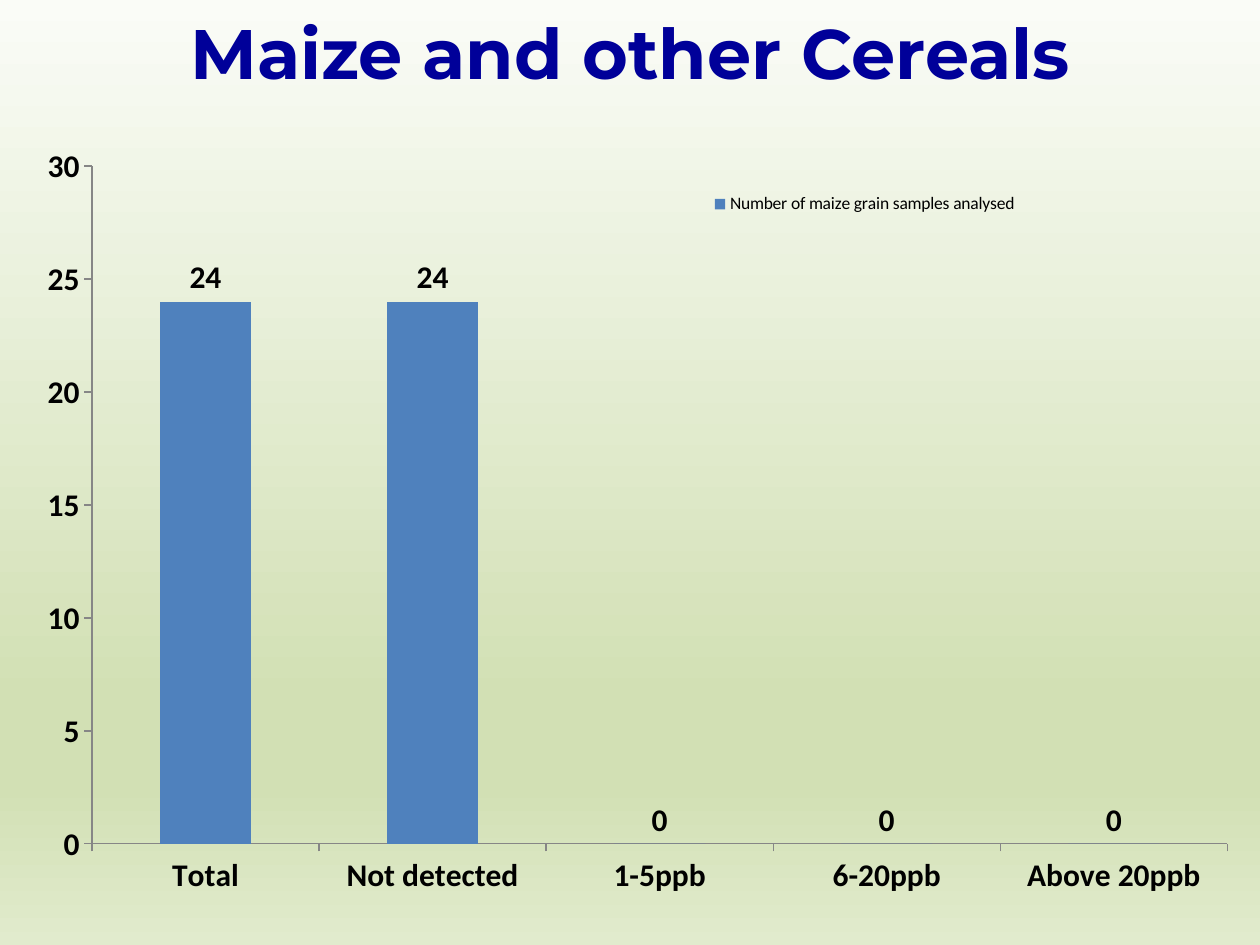
from dataclasses import dataclass

from lxml import etree
from pptx import Presentation
from pptx.chart.data import CategoryChartData
from pptx.dml.color import RGBColor
from pptx.enum.chart import (XL_CHART_TYPE, XL_LABEL_POSITION,
                             XL_LEGEND_POSITION, XL_TICK_MARK)
from pptx.enum.text import MSO_ANCHOR, PP_ALIGN
from pptx.oxml.ns import qn
from pptx.util import Emu, Pt

COLUMNS = XL_CHART_TYPE.COLUMN_CLUSTERED
ABOVE_BAR = XL_LABEL_POSITION.OUTSIDE_END
LEGEND_RIGHT = XL_LEGEND_POSITION.RIGHT
TICK_OUTSIDE = XL_TICK_MARK.OUTSIDE
MIDDLE = MSO_ANCHOR.MIDDLE
CENTER = PP_ALIGN.CENTER

PX_PER_INCH = 126
COLORS = {"title": "000099", "text": "000000", "bar": "4F81BD", "axis": "868686"}
TITLE_FONT, CHART_FONT = "Montserrat", "Calibri"


@dataclass(frozen=True)
class Box:
    """A rectangle in px."""
    left: int
    top: int
    width: int
    height: int

    def to_emu(self) -> list[Emu]:
        return [px(n) for n in (self.left, self.top, self.width, self.height)]


@dataclass(frozen=True)
class GradientStop:
    percent: int
    color: str


SLIDE = Box(0, 0, 1260, 945)
TITLE = Box(63, 10, 1134, 94)
CHART = Box(21, 147, 1207, 756)
PLOT = Box(92, 166, 1136, 678)
LEGEND = Box(708, 188, 314, 32)
BACKGROUND = [GradientStop(0, "FAFCF7"), GradientStop(74, "D2E0B4"),
              GradientStop(83, "D2E0B4"), GradientStop(100, "E1EBCD")]
SAMPLES = {"Total": 24, "Not detected": 24, "1-5ppb": 0, "6-20ppb": 0,
           "Above 20ppb": 0}


def px(length: int) -> Emu:
    return Emu(round(length * 914400 / PX_PER_INCH))


def rgb(name: str) -> RGBColor:
    return RGBColor.from_string(COLORS[name])


def style_font(font, *, size: int, color: str = "text", name: str = CHART_FONT,
               bold: bool = False) -> None:
    font.name, font.size, font.bold = name, Pt(size), bold
    font.color.rgb = rgb(color)


def add_text(slide, box: Box, text: str, *, line_spacing: float = 1.0,
             **font_format) -> None:
    shape = slide.shapes.add_textbox(*box.to_emu())
    frame = shape.text_frame
    frame.word_wrap = True
    frame.vertical_anchor = MIDDLE
    paragraph = frame.paragraphs[0]
    paragraph.alignment = CENTER
    paragraph.line_spacing = line_spacing
    run = paragraph.add_run()
    run.text = text
    style_font(run.font, **font_format)


def paint_background(slide, stops: list[GradientStop]) -> None:
    fill = slide.background.fill
    fill.gradient()
    fill.gradient_angle = 270  # top to bottom
    stop_list = next(slide.element.iter(qn("a:gsLst")))
    for old_stop in list(stop_list):
        stop_list.remove(old_stop)
    for stop in stops:
        node = etree.SubElement(stop_list, qn("a:gs"), pos=str(stop.percent * 1000))
        etree.SubElement(node, qn("a:srgbClr"), val=stop.color)


def make_layout(box: Box, *, inner: bool = False):
    """Manual layout of a chart part, as fractions of the chart."""
    layout = etree.Element(qn("c:layout"))
    manual = etree.SubElement(layout, qn("c:manualLayout"))
    values = {"layoutTarget": "inner"} if inner else {}
    values |= {"xMode": "edge", "yMode": "edge",
               "x": (box.left - CHART.left) / CHART.width,
               "y": (box.top - CHART.top) / CHART.height,
               "w": box.width / CHART.width, "h": box.height / CHART.height}
    for tag, value in values.items():
        etree.SubElement(manual, qn(f"c:{tag}"), val=str(value))
    return layout


def style_axis(axis) -> None:
    axis.has_major_gridlines = False
    axis.major_tick_mark = TICK_OUTSIDE
    axis.format.line.color.rgb = rgb("axis")
    axis.format.line.width = Pt(0.75)
    style_font(axis.tick_labels.font, size=18, bold=True)


def add_samples_chart(slide) -> None:
    data = CategoryChartData()
    data.categories = list(SAMPLES)
    data.add_series("Number of maize grain samples analysed", list(SAMPLES.values()))
    chart = slide.shapes.add_chart(COLUMNS, *CHART.to_emu(), data).chart
    chart.has_title = False
    style_font(chart.font, size=10)

    # Bars and their values
    plot = chart.plots[0]
    plot.vary_by_categories = False
    plot.gap_width = 150
    series = plot.series[0]
    series.format.fill.solid()
    series.format.fill.fore_color.rgb = rgb("bar")
    labels = series.data_labels
    labels.show_value = True
    labels.position = ABOVE_BAR
    style_font(labels.font, size=18, bold=True)

    # Axes
    for axis in (chart.category_axis, chart.value_axis):
        style_axis(axis)
    chart.value_axis.minimum_scale = 0
    chart.value_axis.maximum_scale = 30
    chart.value_axis.major_unit = 5

    # Legend and plot positions
    chart.has_legend = True
    legend = chart.legend
    legend.position = LEGEND_RIGHT
    legend.include_in_layout = False
    style_font(legend.font, size=10)
    plot_area = next(chart.element.iter(qn("c:plotArea")))
    legend_node = next(chart.element.iter(qn("c:legend")))
    for node in plot_area.findall(qn("c:layout")) + legend_node.findall(qn("c:layout")):
        node.getparent().remove(node)
    plot_area.insert(0, make_layout(PLOT, inner=True))
    legend_node.find(qn("c:legendPos")).addnext(make_layout(LEGEND))


def main() -> None:
    presentation = Presentation()
    presentation.slide_width = px(SLIDE.width)
    presentation.slide_height = px(SLIDE.height)
    slide = presentation.slides.add_slide(presentation.slide_layouts[6])
    paint_background(slide, BACKGROUND)
    add_text(slide, TITLE, "Maize and other Cereals", line_spacing=0.9,
             size=40, color="title", name=TITLE_FONT, bold=True)
    add_samples_chart(slide)
    presentation.save("out.pptx")


if __name__ == "__main__":
    main()
